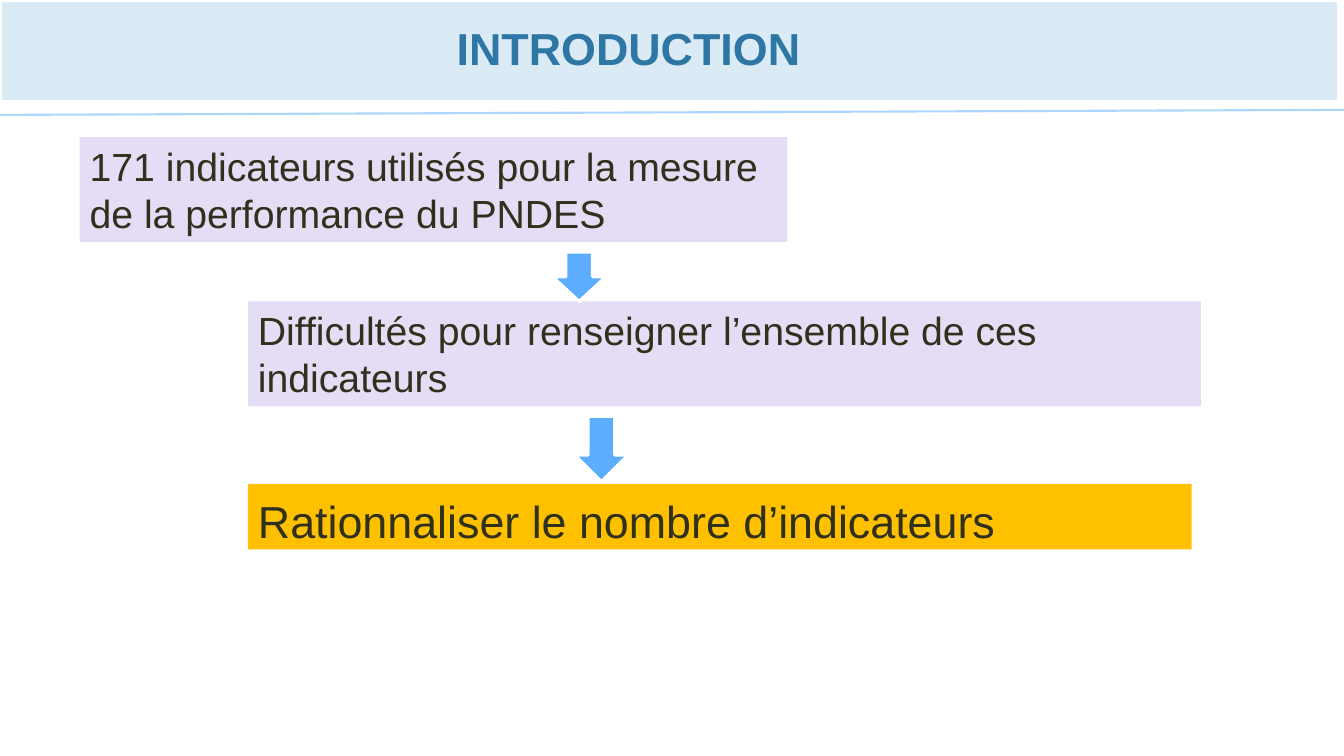
from pptx import Presentation
from pptx.dml.color import RGBColor
from pptx.enum.shapes import MSO_CONNECTOR, MSO_SHAPE
from pptx.enum.text import MSO_ANCHOR, MSO_AUTO_SIZE, PP_ALIGN
from pptx.oxml.ns import qn
from pptx.util import Inches, Pt
from lxml.etree import SubElement

LILAC, GOLD, BLUE = "E5DCF5", "FFC000", "5CADFF"
INK, WHITE = "30311D", "FFFFFF"

STEPS = [
    ((0.79, 1.36, 7.02, 1.04), LILAC, 28, 1.0,
     "171 indicateurs utilisés pour la mesure de la performance du PNDES"),
    ((2.46, 2.99, 9.45, 1.04), LILAC, 28, 1.0,
     "Difficultés pour renseigner l’ensemble de ces indicateurs"),
    ((2.46, 4.8, 9.36, 0.65), GOLD, 32, 1.1,
     "Rationnaliser le nombre d’indicateurs"),
]
ARROWS = [(5.48, 2.5, 0.53, 0.49), (5.7, 4.13, 0.53, 0.65)]


def inches(box):
    return [Inches(value) for value in box]


def paint(color, code):
    """Make a fill or line solid in the given hex colour."""
    color.solid()
    color.fore_color.rgb = RGBColor.from_string(code)


def write(frame, text, color, **form):
    """Put one formatted paragraph in a text frame and return it."""
    frame.word_wrap = True
    frame.text = text
    par = frame.paragraphs[0]
    for key, value in {"name": "Arial", **form}.items():
        setattr(par.font, key, value)
    par.font.color.rgb = RGBColor.from_string(color)
    return par


def add_block(slide, kind, box, fill):
    """Add a preset shape with a white outline."""
    block = slide.shapes.add_shape(kind, *inches(box))
    block.shadow.inherit = False
    paint(block.fill, fill)
    paint(block.line.fill, WHITE)
    block.line.width = Pt(2.25)


def add_rule(slide, ends, color, width):
    rule = slide.shapes.add_connector(MSO_CONNECTOR.STRAIGHT, *inches(ends))
    paint(rule.line.fill, color)
    rule.line.width = Pt(width)
    SubElement(rule.element.spPr, qn("a:effectLst"))


def set_title(slide, box, text):
    title = slide.shapes.title
    title.left, title.top, title.width, title.height = inches(box)
    frame = title.text_frame
    frame.auto_size = MSO_AUTO_SIZE.NONE
    frame.vertical_anchor = MSO_ANCHOR.MIDDLE
    par = write(frame, text, "2E76A3", size=Pt(32), bold=True)
    par.alignment = PP_ALIGN.CENTER
    # Bring the title in front of the band
    title.element.getparent().append(title.element)


def add_step(slide, box, fill, size, space, text):
    step = slide.shapes.add_textbox(*inches(box))
    paint(step.fill, fill)
    par = write(step.text_frame, text, INK, size=Pt(size))
    par.line_spacing = space
    step.text_frame.auto_size = MSO_AUTO_SIZE.SHAPE_TO_FIT_TEXT


def main():
    deck = Presentation()
    deck.slide_width, deck.slide_height = inches((13.33, 7.5))
    slide = deck.slides.add_slide(deck.slide_layouts[5])
    add_block(slide, MSO_SHAPE.RECTANGLE, (0, 0, 13.28, 1.01), "DBEBF5")
    add_rule(slide, (0, 1.14, 13.33, 1.09), "ADD6FF", 1.5)
    set_title(slide, (1.2, -0.18, 10.07, 1.31), "INTRODUCTION")
    for step in STEPS:
        add_step(slide, *step)
    for box in ARROWS:
        add_block(slide, MSO_SHAPE.DOWN_ARROW, box, BLUE)
    deck.save("out.pptx")


if __name__ == "__main__":
    main()
